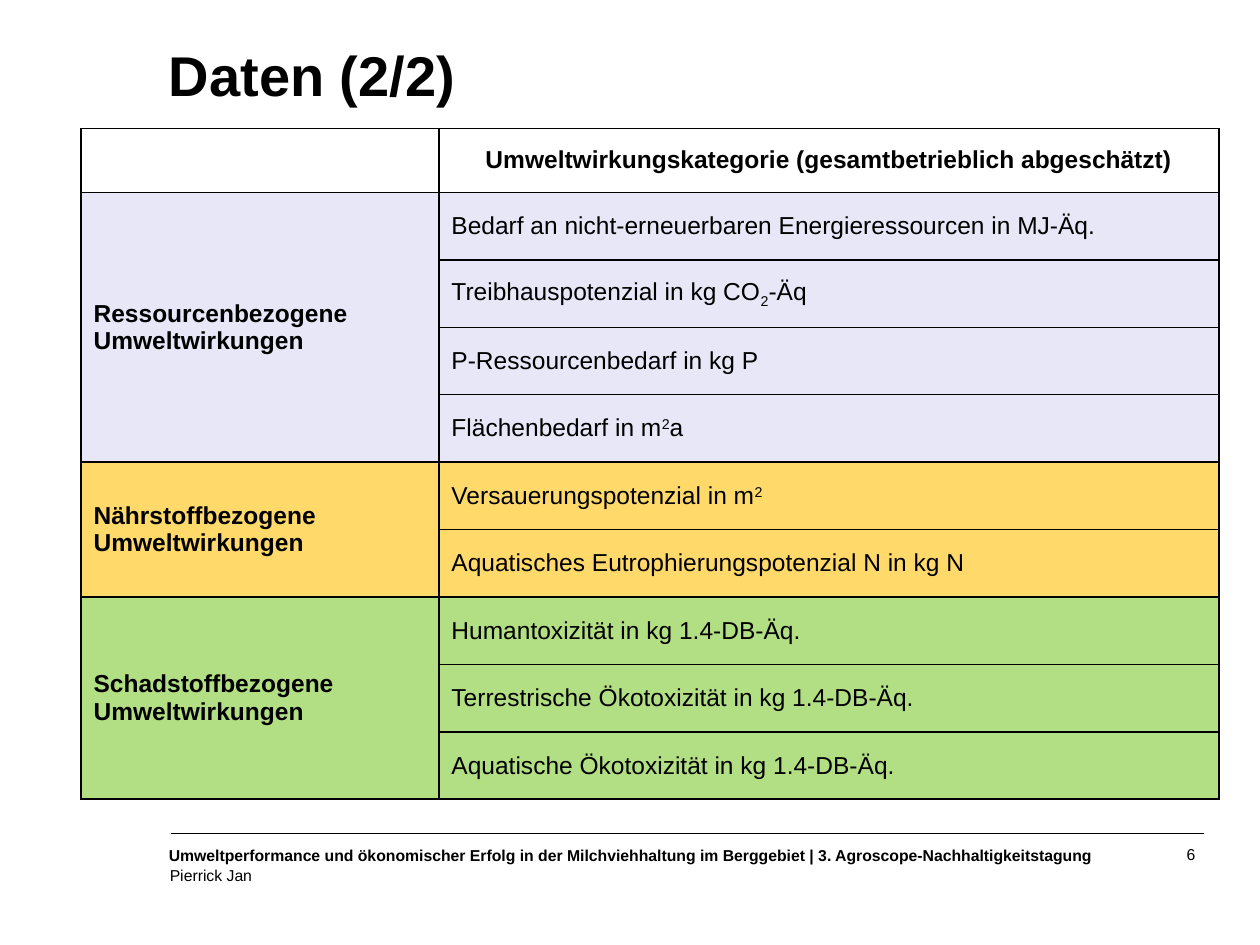
import pptx
import pptx.util
import pptx.dml.color
import pptx.enum.shapes
import pptx.enum.text
import pptx.oxml
import pptx.oxml.ns
from lxml import etree

Pt = pptx.util.Pt
ALIGN = pptx.enum.text.PP_ALIGN
qn = pptx.oxml.ns.qn


def rgb(value):
    return pptx.dml.color.RGBColor.from_string(value)


def write(tf, text, size=14, bold=False, align=ALIGN.LEFT, spacing=None):
    """Fill a text frame; "_2_" is set as subscript and "^2^" as superscript."""
    p = tf.paragraphs[0]
    p.alignment = align
    if spacing:
        p.line_spacing = spacing
    for part in text.replace("_2_", "|_2|").replace("^2^", "|^2|").split("|"):
        if not part:
            continue
        r = p.add_run()
        r.text = part.lstrip("_^")
        r.font.name = "Arial"
        r.font.size = Pt(size)
        r.font.bold = bold
        r.font.color.rgb = rgb("000000")
        if part[0] in "_^":
            r.font._element.set("baseline", "-25000" if part[0] == "_" else "30000")


prs = pptx.Presentation()
prs.slide_width, prs.slide_height = Pt(720), Pt(540)
s = prs.slides.add_slide(prs.slide_layouts[6])

# Title and footer: left, top, width, height, text, format
boxes = [
    (96.5, 26.6, 587.5, 44, "Daten (2/2)", dict(size=32, bold=True, spacing=Pt(35))),
    (96.5, 483.1, 560, 12, "Umweltperformance und ökonomischer Erfolg in der Milchviehhaltung "
     "im Berggebiet", dict(size=9, bold=True)),
    (97, 494.6, 250, 12, "Pierrick Jan", dict(size=9)),
    (507, 482.4, 176, 12, "6", dict(size=9, align=ALIGN.RIGHT, spacing=1.05)),
]
for left, top, width, height, text, style in boxes:
    tf = s.shapes.add_textbox(Pt(left), Pt(top), Pt(width), Pt(height)).text_frame
    tf.word_wrap = True
    tf.margin_left = tf.margin_right = tf.margin_top = tf.margin_bottom = 0
    write(tf, text, **style)
    if text.startswith("Umweltperformance"):
        tf.paragraphs[0].runs[0].text += " | 3. Agroscope-Nachhaltigkeitstagung"

rule = s.shapes.add_connector(pptx.enum.shapes.MSO_CONNECTOR.STRAIGHT,
                              Pt(97.8), Pt(476.2), Pt(687.8), Pt(476.2))
rule.line.color.rgb = rgb("000000")
rule.line.width = Pt(0.75)
etree.SubElement(rule._element.spPr, qn("a:effectLst"))

# Impact table: group, fill, opacity in percent, impact categories
groups = [
    ("", "FFFFFF", 100, ["Umweltwirkungskategorie (gesamtbetrieblich abgeschätzt)"]),
    ("Ressourcenbezogene Umweltwirkungen", "D1D1F0", 50, [
        "Bedarf an nicht-erneuerbaren Energieressourcen in MJ-Äq.",
        "Treibhauspotenzial in kg CO_2_-Äq",
        "P-Ressourcenbedarf in kg P",
        "Flächenbedarf in m^2^a"]),
    ("Nährstoffbezogene Umweltwirkungen", "FFC000", 59, [
        "Versauerungspotenzial in m^2^",
        "Aquatisches Eutrophierungspotenzial N in kg N"]),
    ("Schadstoffbezogene Umweltwirkungen", "92D050", 70, [
        "Humantoxizität in kg 1.4-DB-Äq.",
        "Terrestrische Ökotoxizität in kg 1.4-DB-Äq.",
        "Aquatische Ökotoxizität in kg 1.4-DB-Äq."]),
]
header_height, row_height = 36.7, 38.55
row_count = sum(len(group[3]) for group in groups)
table = s.shapes.add_table(row_count, 2, Pt(46.3), Pt(73.3), Pt(650.2),
                           Pt(header_height + (row_count - 1) * row_height)).table
table.first_row = table.horz_banding = False
table.columns[0].width, table.columns[1].width = Pt(204.5), Pt(445.7)
for i, row in enumerate(table.rows):
    row.height = Pt(row_height if i else header_height)

first = 0
for name, color, opacity, categories in groups:
    for i, category in enumerate(categories, first):
        for cell in table.rows[i].cells:
            cell.vertical_anchor = pptx.enum.text.MSO_ANCHOR.MIDDLE
            tcPr = cell._tc.get_or_add_tcPr()
            for side in ("lnL", "lnR", "lnT", "lnB"):
                ln = etree.SubElement(tcPr, qn("a:" + side), w=str(Pt(1)))
                line_fill = etree.SubElement(ln, qn("a:solidFill"))
                etree.SubElement(line_fill, qn("a:srgbClr"), val="000000")
            cell.fill.solid()
            cell.fill.fore_color.rgb = rgb(color)
            if opacity < 100:
                clr = tcPr.find(qn("a:solidFill")).find(qn("a:srgbClr"))
                etree.SubElement(clr, qn("a:alpha"), val=str(opacity * 1000))
        write(table.cell(i, 1).text_frame, category, bold=i == 0,
              align=ALIGN.LEFT if i else ALIGN.CENTER)
    last = first + len(categories) - 1
    if last > first:
        table.cell(first, 0).merge(table.cell(last, 0))
    write(table.cell(first, 0).text_frame, name, bold=True)
    first = last + 1

prs.save("out.pptx")
